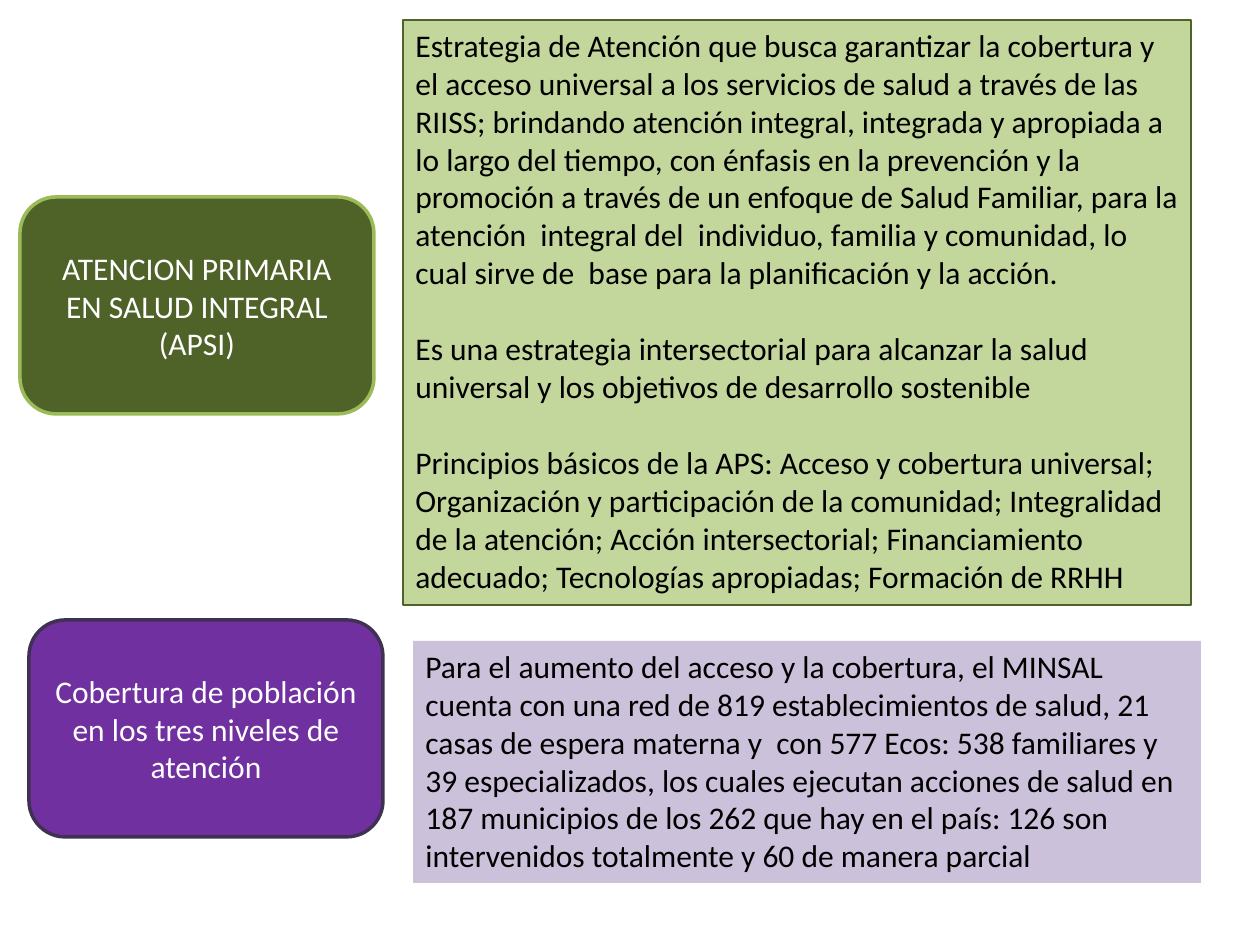
from pptx import Presentation
from pptx.dml.color import RGBColor
from pptx.enum.shapes import MSO_SHAPE as Shape
from pptx.enum.text import MSO_ANCHOR as Anchor, PP_ALIGN as Align
from pptx.util import Pt

PX = 914400 / 126  # EMU per pixel
SLIDE_SIZE = 1260, 945

WHITE = RGBColor(0xFF, 0xFF, 0xFF)
BLACK = RGBColor(0x00, 0x00, 0x00)
DARK_GREEN = RGBColor(0x4F, 0x62, 0x28)
GREEN = RGBColor(0x9B, 0xBB, 0x59)
PALE_GREEN = RGBColor(0xC3, 0xD6, 0x9B)
PURPLE = RGBColor(0x70, 0x30, 0xA0)
DARK_PURPLE = RGBColor(0x40, 0x31, 0x52)
PALE_PURPLE = RGBColor(0xCC, 0xC1, 0xDA)

# Content: each topic has a label and its explanation
TOPICS = [
    {
        "label": "ATENCION PRIMARIA EN SALUD INTEGRAL (APSI)",
        "label_at": (20, 197),
        "label_colors": (DARK_GREEN, GREEN),
        "details": [
            "Estrategia de Atención que busca garantizar la cobertura y el acceso "
            "universal a los servicios de salud a través de las RIISS; brindando "
            "atención integral, integrada y apropiada a lo largo del tiempo, con "
            "énfasis en la prevención y la promoción a través de un enfoque de "
            "Salud Familiar, para la atención  integral del  individuo, familia y "
            "comunidad, lo cual sirve de  base para la planificación y la acción.",
            "Es una estrategia intersectorial para alcanzar la salud universal y "
            "los objetivos de desarrollo sostenible",
            "Principios básicos de la APS: Acceso y cobertura universal; "
            "Organización y participación de la comunidad; Integralidad de la "
            "atención; Acción intersectorial; Financiamiento adecuado; "
            "Tecnologías apropiadas; Formación de RRHH",
        ],
        "details_at": (403, 20),
        "details_height": 585,
        "details_colors": (PALE_GREEN, DARK_GREEN),
    },
    {
        "label": "Cobertura de población en los tres niveles de atención",
        "label_at": (29, 620),
        "label_colors": (PURPLE, DARK_PURPLE),
        "details": [
            "Para el aumento del acceso y la cobertura, el MINSAL cuenta con una "
            "red de 819 establecimientos de salud, 21 casas de espera materna y  "
            "con 577 Ecos: 538 familiares y 39 especializados, los cuales ejecutan "
            "acciones de salud en 187 municipios de los 262 que hay en el país: "
            "126 son intervenidos totalmente y 60 de manera parcial",
        ],
        "details_at": (413, 641),
        "details_height": 242,
        "details_colors": (PALE_PURPLE, None),
    },
]
LABEL_SIZE = 354, 217
DETAILS_WIDTH = 788


def px(*lengths):
    return [round(length * PX) for length in lengths]


def write(frame, paragraphs, color=BLACK, align=Align.LEFT, anchor=Anchor.TOP,
          size=18, gap=22):
    frame.word_wrap = True
    frame.vertical_anchor = anchor
    for index, text in enumerate(paragraphs):
        paragraph = frame.add_paragraph() if index else frame.paragraphs[0]
        paragraph.alignment = align
        paragraph.space_before = Pt(gap if index else 0)
        run = paragraph.add_run()
        run.text = text
        run.font.name = "Calibri"
        run.font.size = Pt(size)
        run.font.color.rgb = color


def add_panel(slide, preset, at, size, colors, line_width):
    panel = slide.shapes.add_shape(preset, *px(*at, *size))
    fill_color, line_color = colors
    panel.shadow.inherit = False
    panel.fill.solid()
    panel.fill.fore_color.rgb = fill_color
    if line_color is None:
        panel.line.fill.background()
    else:
        panel.line.color.rgb = line_color
        panel.line.width = Pt(line_width)
    return panel.text_frame


def main():
    deck = Presentation()
    deck.slide_width, deck.slide_height = px(*SLIDE_SIZE)
    slide = deck.slides.add_slide(deck.slide_layouts[6])

    for topic in TOPICS:
        # Explanation on the right
        details = add_panel(slide, Shape.RECTANGLE, topic["details_at"],
                            (DETAILS_WIDTH, topic["details_height"]),
                            topic["details_colors"], 0.75)
        write(details, topic["details"])

        # Rounded label on the left
        label = add_panel(slide, Shape.ROUNDED_RECTANGLE, topic["label_at"],
                          LABEL_SIZE, topic["label_colors"], 2)
        write(label, [topic["label"]], color=WHITE, align=Align.CENTER,
              anchor=Anchor.MIDDLE)

    deck.save("out.pptx")


if __name__ == "__main__":
    main()
